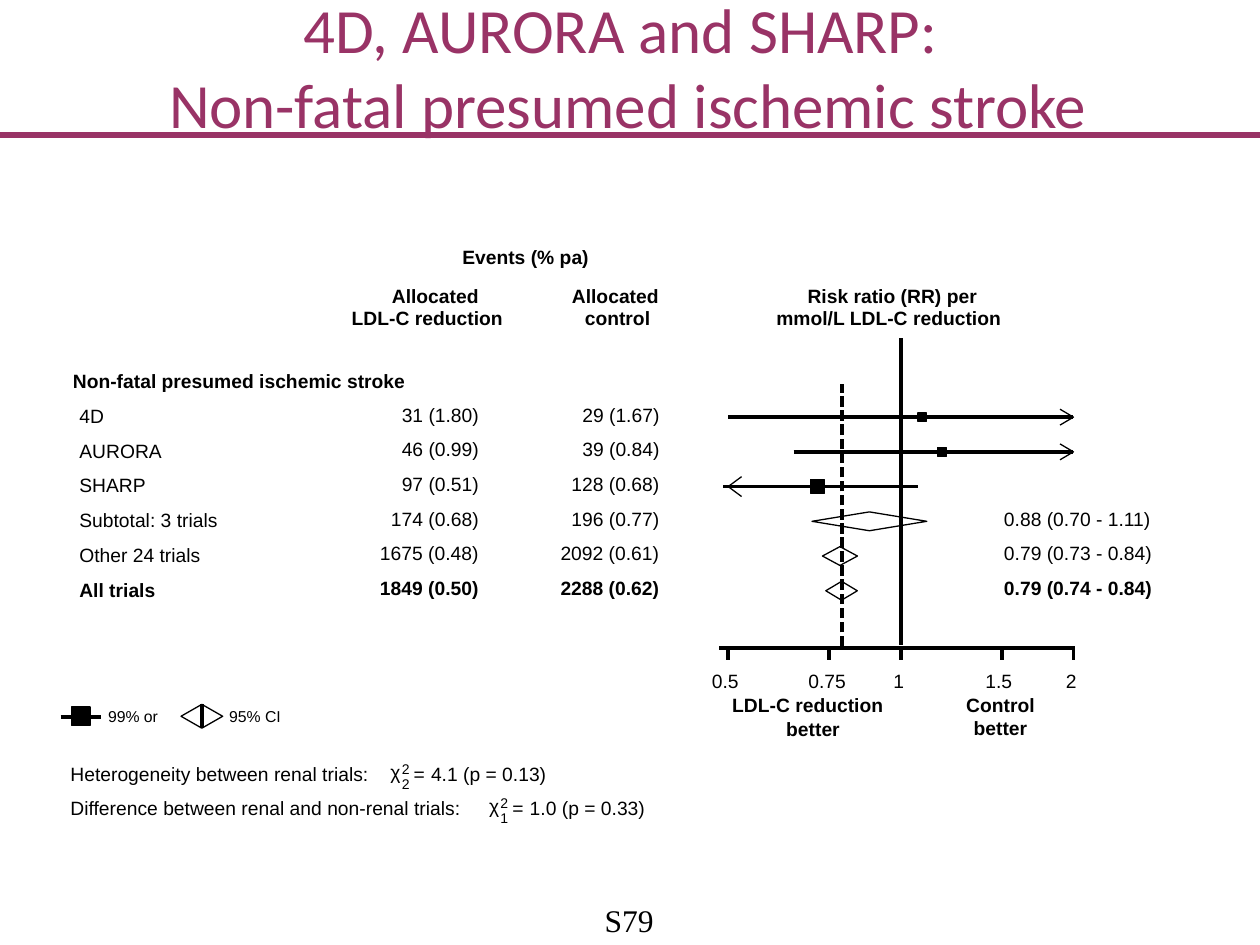
from math import log2

from lxml.etree import SubElement
from pptx import Presentation
from pptx.dml.color import RGBColor as RGB
from pptx.enum.dml import MSO_LINE as Dash
from pptx.enum.shapes import MSO_CONNECTOR as Conn, MSO_SHAPE as Shp
from pptx.enum.text import MSO_AUTO_SIZE as Auto, PP_ALIGN as Al
from pptx.oxml.ns import qn
from pptx.util import Cm, Pt

COLORS = {"title": "993366", "ink": "000000", "paper": "FFFFFF"}


def rr_x(rr):
    """Horizontal place of a risk ratio on the log axis, in cm."""
    return 18.16 + 3.48 * log2(rr)


class Canvas:
    def __init__(self, slide, font="Arial", size=11):
        self.s, self.font, self.size = slide, font, size

    def color(self, name):
        return RGB.from_string(COLORS[name])

    def text(self, x, y, w, lines, h=0.48, size=None, bold=False, font=None,
             color="ink", align=Al.LEFT, wrap=True):
        sp = self.s.shapes.add_textbox(Cm(x), Cm(y), Cm(w), Cm(h))
        tf = sp.text_frame
        tf.margin_left = tf.margin_right = tf.margin_top = tf.margin_bottom = 0
        tf.word_wrap, tf.auto_size = wrap, Auto.SHAPE_TO_FIT_TEXT
        for i, line in enumerate(lines.split("\n")):
            p = tf.add_paragraph() if i else tf.paragraphs[0]
            p.alignment = align
            r = p.add_run()
            r.text = line
            r.font.name, r.font.size = font or self.font, Pt(size or self.size)
            r.font.bold = bold
            r.font.color.rgb = self.color(color)

    def line(self, x1, y1, x2, y2, color="ink", width=0, dash=None):
        sp = self.s.shapes.add_connector(Conn.STRAIGHT, Cm(x1), Cm(y1), Cm(x2), Cm(y2))
        sp.line.color.rgb, sp.line.width = self.color(color), Pt(width)
        if dash:
            sp.line.dash_style = dash
        SubElement(sp.element.spPr, qn("a:effectLst"))

    def paint(self, sp, fill):
        sp.shadow.inherit = False
        if fill:
            sp.fill.solid()
            sp.fill.fore_color.rgb = self.color(fill)
        else:
            sp.fill.background()
        sp.line.color.rgb, sp.line.width = self.color("ink"), Pt(0)

    def square(self, cx, cy, side):
        sp = self.s.shapes.add_shape(Shp.RECTANGLE, Cm(cx - side / 2),
                                     Cm(cy - side / 2), Cm(side), Cm(side))
        self.paint(sp, "ink")

    def outline(self, points, close=False, fill=None):
        (x, y), *rest = [(Cm(px), Cm(py)) for px, py in points]
        fb = self.s.shapes.build_freeform(x, y)
        fb.add_line_segments(rest, close=close)
        self.paint(fb.convert_to_shape(), fill)

    def diamond(self, x1, x2, y, half, fill=None):
        mid = (x1 + x2) / 2
        self.outline([(x1, y), (mid, y + half), (x2, y), (mid, y - half)], True, fill)

    def arrowhead(self, tip, y, back, half):
        self.outline([(tip + back, y + half), (tip, y), (tip + back, y - half)])


def main():
    prs = Presentation()
    prs.slide_width, prs.slide_height = Cm(25.4), Cm(19.05)
    c = Canvas(prs.slides.add_slide(prs.slide_layouts[6]))

    # Title, rule and page number
    c.line(0, 2.72, 25.4, 2.72, "title", 3)
    c.text(12.14, 18.16, 1.09, "S79", 0.76, 18, font="Times New Roman",
           align=Al.CENTER, wrap=False)
    c.text(3.4, -0.2, 18.52, "4D, AURORA and SHARP: \nNon-fatal presumed ischemic stroke",
           3.07, 36, font="Calibri", color="title", align=Al.CENTER, wrap=False)

    # Axis with ticks and the line of no effect
    c.line(rr_x(1), 13, rr_x(1), 6.81)
    c.line(14.5, 13.06, 21.64, 13.06)
    for label in ("0.5", "0.75", "1", "1.5", "2"):
        x, n = rr_x(float(label)), len(label)
        c.line(x, 13.03, x, 13.31)
        c.text(x - 0.06 - 0.09 * n, 13.49, 0.25 + 0.21 * n, label)

    # Headings
    for x, y, w, words in (
        (9.32, 4.95, 3.2, "Events (% pa)"),
        (7.9, 5.74, 2.26, "Allocated"),
        (7.09, 6.17, 3.73, "LDL-C reduction"),
        (11.53, 5.74, 2.26, "Allocated"),
        (11.79, 6.17, 1.75, "control"),
        (16.28, 5.74, 4.19, "Risk ratio (RR) per"),
        (15.65, 6.17, 5.51, "mmol/L LDL-C reduction"),
        (14.76, 13.97, 3.76, "LDL-C reduction"),
        (15.85, 14.45, 1.5, "better"),
        (1.47, 7.44, 6.91, "Non-fatal presumed ischemic stroke"),
    ):
        c.text(x, y, w, words, bold=True)
    c.text(19.46, 13.97, 1.42, "Control\nbetter", 0.94, bold=True, align=Al.CENTER)

    # Legend
    c.square(1.63, 14.44, 0.37)
    c.line(1.22, 14.45, 2.03, 14.45)
    c.text(2.18, 14.25, 1.12, "99% or", 0.38, 9)
    c.diamond(3.65, 4.49, 14.44, 0.24, "paper")
    c.line(4.07, 14.68, 4.07, 14.2)
    c.text(4.62, 14.25, 1.17, "95% CI", 0.38, 9)

    # Trial rows: name, events, low, high, then square (ratio, side) or summary text
    rows = [
        ("4D", "31 (1.80)", "29 (1.67)", 0.5, 2, (1.09, 0.17)),
        ("AURORA", "46 (0.99)", "39 (0.84)", 0.65, 2, (1.18, 0.18)),
        ("SHARP", "97 (0.51)", "128 (0.68)", 0.49, 1.07, (0.715, 0.28)),
        ("Subtotal: 3 trials", "174 (0.68)", "196 (0.77)", 0.7, 1.11, "0.88 (0.70 - 1.11)"),
        ("Other 24 trials", "1675 (0.48)", "2092 (0.61)", 0.73, 0.84, "0.79 (0.73 - 0.84)"),
        ("All trials", "1849 (0.50)", "2288 (0.62)", 0.74, 0.84, "0.79 (0.74 - 0.84)"),
    ]
    for i, (name, treated, control, low, high, mark) in enumerate(rows):
        y, bold = 8.41 + 0.7 * i, name == "All trials"
        c.text(1.6, y - 0.26, 3.5, name, bold=bold)
        for x, count in ((8.1, treated), (11.74, control)):
            extra = len(count) - 9
            c.text(x - 0.22 * extra, y - 0.29, 1.98 + 0.26 * extra, count, bold=bold)
        if isinstance(mark, str):
            c.diamond(rr_x(low), rr_x(high), y, 0.19)
            c.text(20.24, y - 0.29, 3.7, mark, bold=bold)
            continue
        c.square(rr_x(mark[0]), y, mark[1])
        c.line(rr_x(low), y, rr_x(high), y)
        if high == 2:
            c.arrowhead(rr_x(2), y, -0.27, 0.16)
        if low < 0.5:
            c.arrowhead(rr_x(0.5), y, 0.27, 0.2)
    c.line(rr_x(0.79), 13.03, rr_x(0.79), 7.75, dash=Dash.SQUARE_DOT)

    # Chi-squared tests
    for y, words, w, x, df, value in (
        (15.37, "Heterogeneity between renal trials:", 7.32, 7.87, "2", "4.1 (p = 0.13)"),
        (16.05, "Difference between renal and non-renal trials:", 9.47, 9.86, "1",
         "1.0 (p = 0.33)"),
    ):
        c.text(1.42, y, w, words)
        c.text(x, y - 0.04, 0.53, "χ", 0.46)
        c.text(x + 0.23, y + 0.27, 0.28, df, 0.33, 8)
        c.text(x + 0.23, y - 0.04, 0.28, "2", 0.33, 8)
        c.text(x + 0.47, y, 0.35, "=")
        c.text(x + 0.82, y, 2.9, value)

    prs.save("out.pptx")


if __name__ == "__main__":
    main()
